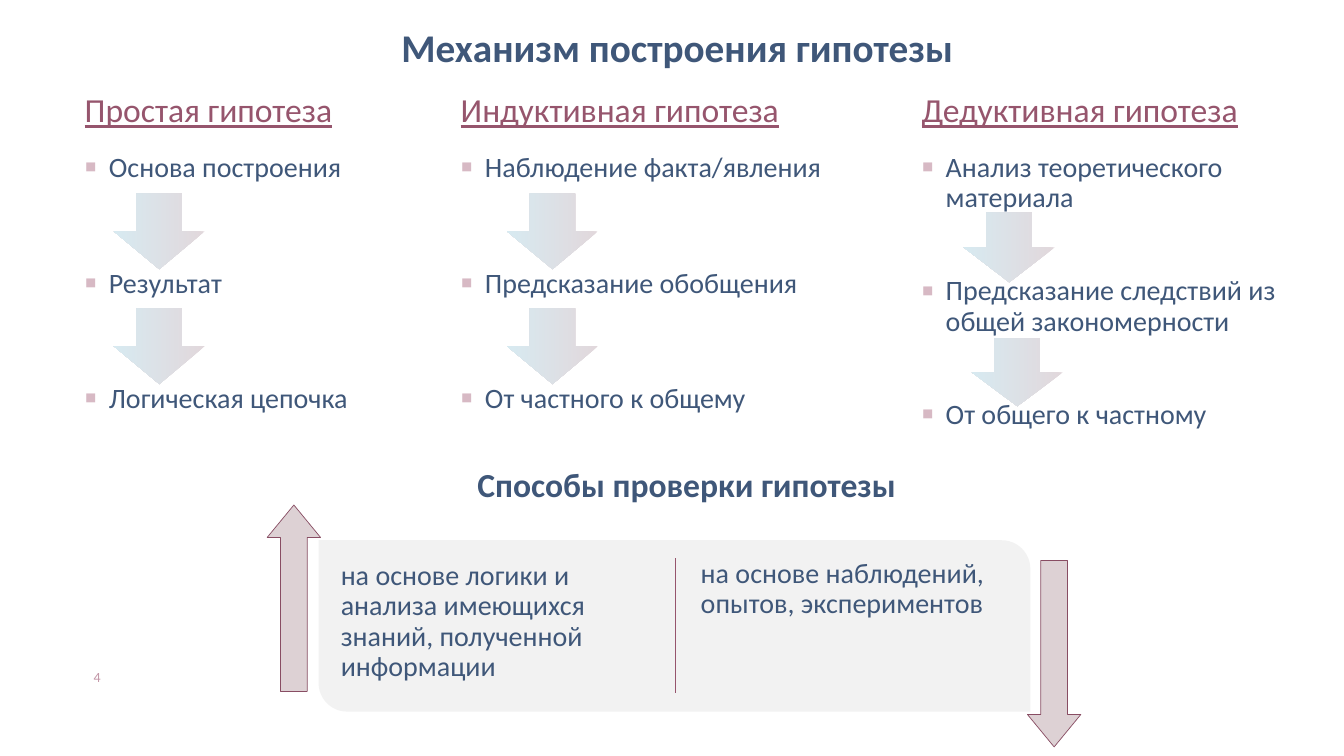
from dataclasses import dataclass

from lxml import etree
from pptx import Presentation
from pptx.dml.color import RGBColor
from pptx.enum.shapes import MSO_CONNECTOR, MSO_SHAPE
from pptx.enum.text import MSO_ANCHOR, PP_ALIGN
from pptx.oxml.ns import qn
from pptx.util import Emu, Pt

LEFT, CENTER = PP_ALIGN.LEFT, PP_ALIGN.CENTER
TOP, BOTTOM = MSO_ANCHOR.TOP, MSO_ANCHOR.BOTTOM
DOWN_ARROW = MSO_SHAPE.DOWN_ARROW
RIGHT_ARROW = MSO_SHAPE.RIGHT_ARROW
PANEL_SHAPE = MSO_SHAPE.ROUND_2_DIAG_RECTANGLE
STRAIGHT = MSO_CONNECTOR.STRAIGHT

PX = 9144  # 100 px to the inch
SLIDE_SIZE = (1333, 750)
COLUMN_WIDTH = 373
FLOW_ARROW_WIDTH = 90
BULLET_INDENT = 24


@dataclass(frozen=True)
class Theme:
    font: str = "Calibri"
    ink: str = "3F5779"
    accent: str = "96556D"
    bullet: str = "D7B9C4"
    number: str = "C396A7"
    panel: str = "F2F2F2"
    arrow_fill: str = "DDD1D4"
    arrow_line: str = "884D63"
    flow_start: str = "6D3B4F"
    flow_end: str = "3B99BB"
    title_size: int = 28
    heading_size: int = 24
    body_size: int = 20
    number_size: int = 10


THEME = Theme()

# left, heading, gap between steps in points, steps, arrows (left, top, height)
COLUMNS = [
    (80, "Простая гипотеза", 61,
     ["Основа построения", "Результат", "Логическая цепочка"],
     [(113, 192, 75), (113, 306, 75)]),
    (453, "Индуктивная гипотеза", 61,
     ["Наблюдение факта/явления", "Предсказание обобщения", "От частного к общему"],
     [(503, 192, 75), (503, 306, 75)]),
    (910, "Дедуктивная гипотеза", 45,
     ["Анализ теоретического материала",
      "Предсказание следствий из общей закономерности", "От общего к частному"],
     [(956, 211, 69), (964, 336, 67)]),
]


def px(*lengths):
    return [Emu(length * PX) for length in lengths]


def rgb(color):
    return RGBColor.from_string(color)


def add_bullet(para):
    properties = para._p.get_or_add_pPr()
    properties.set("marL", str(BULLET_INDENT * PX))
    properties.set("indent", str(-BULLET_INDENT * PX))
    color = etree.SubElement(properties, qn("a:buClr"))
    etree.SubElement(color, qn("a:srgbClr"), val=THEME.bullet)
    etree.SubElement(properties, qn("a:buSzPct"), val="125000")
    etree.SubElement(properties, qn("a:buFont"), typeface=THEME.font)
    etree.SubElement(properties, qn("a:buChar"), char="▪")


def add_text(page, place, lines, size, color=THEME.ink, align=LEFT, anchor=TOP,
             insets=(4, 0, 0, 0), spacing=0.9, gap=0, bold=False,
             underline=False, bullets=False):
    frame = page.shapes.add_textbox(*px(*place)).text_frame
    frame.word_wrap = True
    frame.vertical_anchor = anchor
    (frame.margin_left, frame.margin_top,
     frame.margin_right, frame.margin_bottom) = px(*insets)
    for index, line in enumerate(lines):
        para = frame.add_paragraph() if index else frame.paragraphs[0]
        if bullets:
            add_bullet(para)
        para.alignment = align
        para.line_spacing = spacing
        if index:
            para.space_before = Pt(gap)
        span = para.add_run()
        span.text = line
        font = span.font
        font.name, font.size, font.bold = THEME.font, Pt(size), bold
        font.underline = underline
        font.color.rgb = rgb(color)


def add_flow_arrow(page, left, top, height):
    arrow = page.shapes.add_shape(DOWN_ARROW, *px(left, top, FLOW_ARROW_WIDTH, height))
    arrow.shadow.inherit = False
    arrow.line.fill.background()
    arrow.fill.gradient()
    arrow.fill.gradient_angle = 180
    for stop, color in zip(arrow.fill.gradient_stops, (THEME.flow_start, THEME.flow_end)):
        stop.color.rgb = rgb(color)
    for color in arrow._element.spPr.iter(qn("a:srgbClr")):
        etree.SubElement(color, qn("a:alpha"), val="20000")


def add_solid_shape(page, kind, place, fill, adjustments, line=None, rotation=0):
    shape = page.shapes.add_shape(kind, *px(*place))
    shape.shadow.inherit = False
    shape.rotation = rotation
    for index, value in enumerate(adjustments):
        shape.adjustments[index] = value
    shape.fill.solid()
    shape.fill.fore_color.rgb = rgb(fill)
    if line:
        shape.line.color.rgb = rgb(line)
        shape.line.width = Pt(0.5)
    else:
        shape.line.fill.background()


def add_divider(page, x, top, bottom):
    divider = page.shapes.add_connector(STRAIGHT, *px(x, top, x, bottom))
    divider.line.color.rgb = rgb(THEME.accent)
    divider.line.width = Pt(0.5)
    etree.SubElement(divider._element.spPr, qn("a:effectLst"))


def add_column(page, left, heading, gap, steps, arrows):
    add_text(page, (left, 93, COLUMN_WIDTH, 45), [heading], THEME.heading_size,
             THEME.accent, underline=True)
    add_text(page, (left, 152, COLUMN_WIDTH, 267), steps, THEME.body_size,
             gap=gap, bullets=True)
    for arrow in arrows:
        add_flow_arrow(page, *arrow)


def add_checks(page):
    add_text(page, (424, 455, 514, 50), ["Способы проверки гипотезы"],
             THEME.heading_size, align=CENTER, insets=(10, 5, 10, 5),
             spacing=1.0, bold=True)
    add_solid_shape(page, PANEL_SHAPE, (316, 536, 706, 170), THEME.panel, (0, 0.167))
    add_divider(page, 670, 554, 688)
    for place, words in [
        ((330, 549, 332, 144),
         "на основе логики и анализа имеющихся знаний, полученной информации"),
        ((687, 547, 322, 144), "на основе наблюдений, опытов, экспериментов"),
    ]:
        add_text(page, place, [words], THEME.body_size, insets=(8, 8, 8, 8))
    for left, top, rotation in [(199, 567, 270), (953, 622, 90)]:
        add_solid_shape(page, RIGHT_ARROW, (left, top, 185, 53), THEME.arrow_fill,
                        (0.498, 0.607), THEME.arrow_line, rotation)


def main():
    deck = Presentation()
    deck.slide_width, deck.slide_height = px(*SLIDE_SIZE)
    page = deck.slides.add_slide(deck.slide_layouts[6])

    # Title and page number
    add_text(page, (58, 25, 1223, 45), ["Механизм построения гипотезы"],
             THEME.title_size, align=CENTER, anchor=BOTTOM, bold=True)
    add_text(page, (70, 663, 43, 26), ["4"], THEME.number_size, THEME.number,
             align=CENTER, insets=(10, 0, 0, 0), spacing=1.0)

    # Three kinds of hypothesis
    for column in COLUMNS:
        add_column(page, *column)

    # Ways of checking
    add_checks(page)
    deck.save("out.pptx")


if __name__ == "__main__":
    main()
